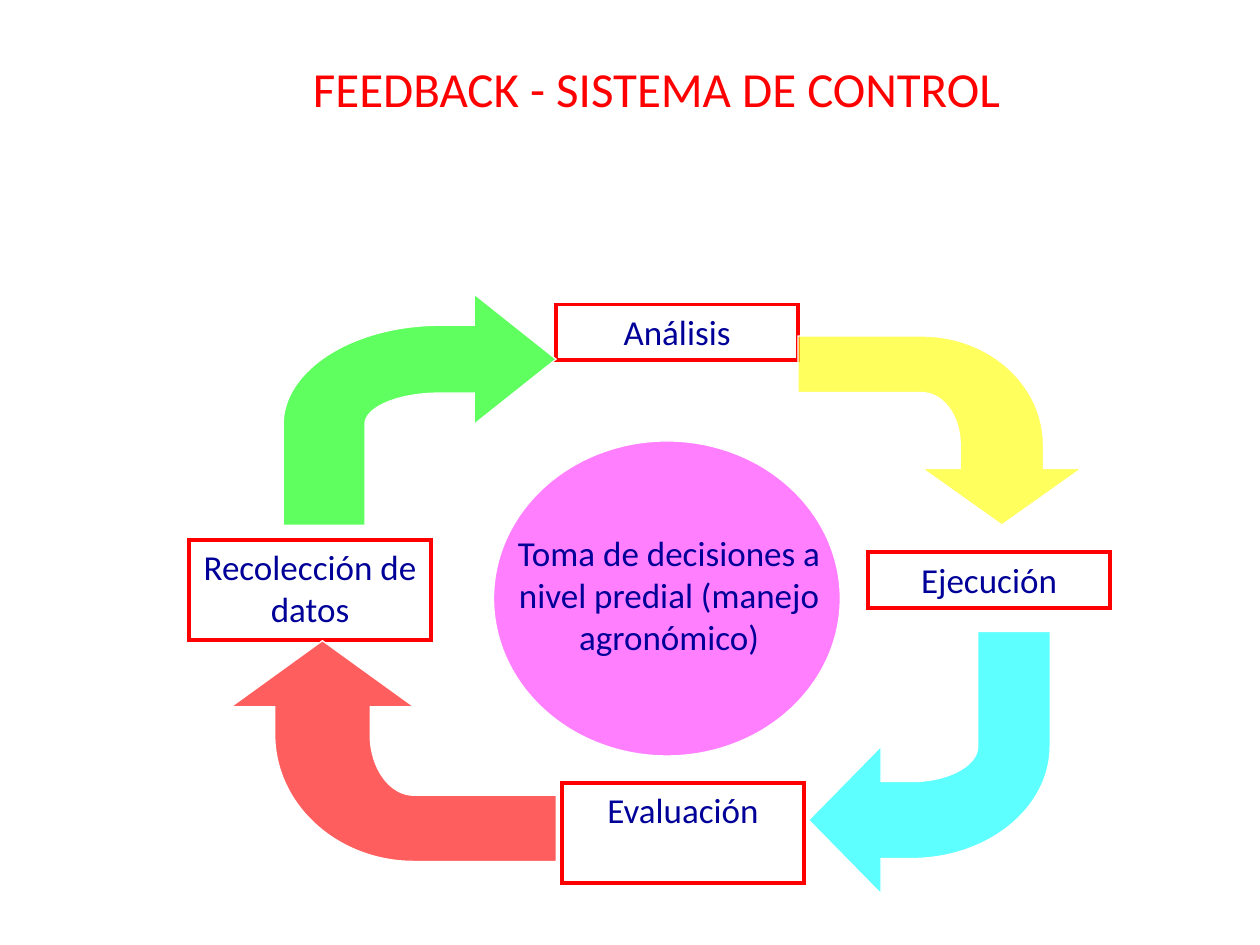
from dataclasses import dataclass

from lxml import etree
from pptx import Presentation
from pptx.dml.color import RGBColor
from pptx.enum import shapes, text
from pptx.oxml import ns
from pptx.util import Cm, Pt


@dataclass(frozen=True)
class Theme:
    font: str = "Calibri"
    head: int = 28
    body: int = 20
    red: str = "FF0000"
    navy: str = "000099"
    white: str = "FFFFFF"
    green: str = "00FF00"
    yellow: str = "FFFF00"
    cyan: str = "00FFFF"
    pink: str = "FF00FF"


T = Theme()
GRID = 21600  # side of the square on which the bent arrow is drawn
OUTER = [(5564, 2912), (0, 7052), (0, 12158)]
INNER = [(6474, 10550), (9139, 9246), (12427, 9246)]
BENT = [(15126, 0), (15126, 2912), (12427, 2912), *OUTER,
        (0, GRID), (6474, GRID), (6474, 12158), *INNER,
        (15126, 9246), (15126, 12158)]


def sub(box, x, y, w, h):
    """Box in Cm whose corner is counted from the corner of another box."""
    return box[0] + x, box[1] + y, w, h


def emu(box):
    return [Cm(v) for v in box]


def write(shape, words, size, color):
    frame = shape.text_frame
    frame.word_wrap = True
    frame.vertical_anchor = text.MSO_ANCHOR.TOP
    para = frame.paragraphs[0]
    para.alignment = text.PP_ALIGN.CENTER
    run = para.add_run()
    run.text = words
    run.font.name = T.font
    run.font.size = Pt(size)
    run.font.color.rgb = RGBColor.from_string(color)


def paint(shape, line, width, fill=None, alpha=100):
    shape.shadow.inherit = False
    shape.line.color.rgb = RGBColor.from_string(line)
    shape.line.width = Pt(width)
    edge = shape.element.spPr.find(ns.qn("a:ln"))
    etree.SubElement(edge, ns.qn("a:miter")).set("lim", "800000")
    if fill is None:
        shape.fill.background()
        return
    shape.fill.solid()
    shape.fill.fore_color.rgb = RGBColor.from_string(fill)
    color = shape.element.spPr.find(ns.qn("a:solidFill"))[0]
    etree.SubElement(color, ns.qn("a:alpha")).set("val", str(alpha * 1000))


def label(slide, box, words, size, color):
    write(slide.shapes.add_textbox(*emu(box)), words, size, color)


def step(slide, box, words):
    rect = slide.shapes.add_shape(shapes.MSO_SHAPE.RECTANGLE, *emu(box))
    paint(rect, T.red, 2.25)
    write(rect, words, T.body, T.navy)


def curve(shape, start):
    """Join three line segments, from the given one on, into one curve."""
    lines = shape.lines[start:start + 3]
    arc = etree.Element(ns.qn("a:cubicBezTo"))
    lines[0].addprevious(arc)
    for line in lines:
        arc.append(line[0])
        line.getparent().remove(line)


def arrow(slide, box, turn, color):
    """Arrow that rises, bends right and is then turned about its centre."""
    x, y, w, h = emu(box)
    build = slide.shapes.build_freeform(GRID, 6079, scale=(w / GRID, h / GRID))
    build.add_line_segments(BENT, close=True)
    shape = build.convert_to_shape(x, y)
    lines = list(shape.element.iter(ns.qn("a:lnTo")))
    for first in (OUTER[0], INNER[0]):
        start = BENT.index(first)
        bow = etree.Element(ns.qn("a:cubicBezTo"))
        lines[start].addprevious(bow)
        for line in lines[start:start + 3]:
            bow.append(line[0])
            line.getparent().remove(line)
    shape.rotation = turn
    paint(shape, T.white, 0.75, color, 63)


def core(slide, box):
    oval = slide.shapes.add_shape(shapes.MSO_SHAPE.OVAL, *emu(box))
    paint(oval, T.white, 0.75, T.pink, 50)
    label(slide, sub(box, 0.15, 1.7, 6.78, 2.82),
          "Toma de decisiones a nivel predial (manejo agronómico)",
          T.body, T.navy)


def cycle(slide, box):
    for words, x, y, h in (
        ("Recolección de datos", 0, 5.06, 2.03),
        ("Análisis", 7.4, 0.32, 1.12),
        ("Ejecución", 13.69, 5.31, 1.12),
        ("Evaluación", 7.52, 9.96, 2.03),
    ):
        step(slide, sub(box, x, y, 4.88, h), words)
    hues = T.green, T.yellow, T.cyan, T.red
    spots = ((1.9, 0.11, 5.5, 4.66), (13.23, 0, 3.81, 5.72),
             (12.49, 6.91, 4.87, 5.29), (1.9, 6.04, 4.45, 6.56))
    for i, (hue, spot) in enumerate(zip(hues, spots)):
        arrow(slide, sub(box, *spot), 90 * i, hue)
    core(slide, sub(box, 6.14, 3.07, 6.99, 6.35))


def main():
    deck = Presentation()
    deck.slide_width, deck.slide_height = Cm(25.4), Cm(19.05)
    slide = deck.slides.add_slide(deck.slide_layouts[6])
    label(slide, (2.97, 1.06, 20.52, 1.45),
          "FEEDBACK - SISTEMA DE CONTROL", T.head, T.red)
    cycle(slide, (3.81, 5.82, 18.57, 12.6))
    deck.save("out.pptx")


if __name__ == "__main__":
    main()
